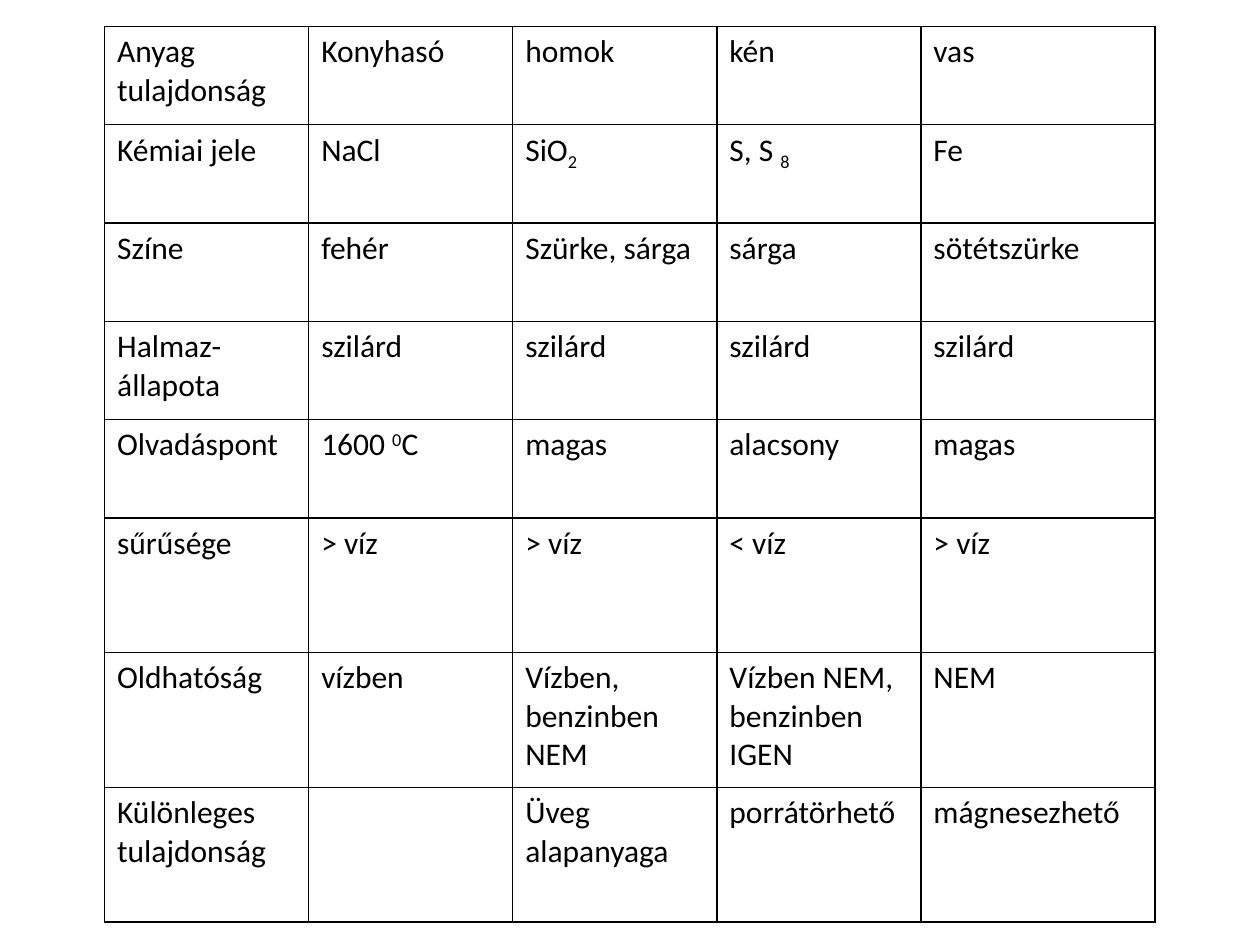
import pptx
import pptx.dml.color
import pptx.oxml
import pptx.util
from lxml import etree

SLIDE = (10, 7.5)
ORIGIN = (0.83, 0.21)
COLUMNS = [1.62] * 4 + [1.86]
ROW_HEIGHTS = [0.78] * 5 + [1.07] * 3
BLACK = "000000"
SUB, SUPER = -25000, 30000

PROPERTIES = [
    ["Anyag\ntulajdonság", "Konyhasó", "homok", "kén", "vas"],
    ["Kémiai jele", "NaCl", [("SiO", 0), ("2", SUB)], [("S, S ", 0), ("8", SUB)], "Fe"],
    ["Színe", "fehér", "Szürke, sárga", "sárga", "sötétszürke"],
    ["Halmaz-állapota"] + ["szilárd"] * 4,
    ["Olvadáspont", [("1600 ", 0), ("0", SUPER), ("C", 0)], "magas", "alacsony", "magas"],
    ["sűrűsége", "> víz", "> víz", "< víz", "> víz"],
    ["Oldhatóság", "vízben", "Vízben, benzinben NEM", "Vízben NEM, benzinben IGEN", "NEM"],
    ["Különleges tulajdonság", "", "Üveg alapanyaga", "porrátörhető", "mágnesezhető"],
]


def rgb(color):
    """Turn a hex string into a colour."""
    return pptx.dml.color.RGBColor.from_string(color)


def write(tf, text, size=18, font="Calibri", color=BLACK):
    """Write a string, or a list of (text, baseline) runs, into a text frame."""
    paragraphs = [[(line, 0)] for line in text.split("\n")] if isinstance(text, str) else [text]
    for i, runs in enumerate(paragraphs):
        p = tf.add_paragraph() if i else tf.paragraphs[0]
        for content, baseline in runs:
            r = p.add_run()
            r.text = content
            r.font.size = pptx.util.Pt(size)
            r.font.name = font
            r.font.color.rgb = rgb(color)
            if baseline:
                r._r.get_or_add_rPr().set("baseline", str(baseline))


def add_borders(cell, color=BLACK, width=1):
    """Draw a solid line on each side of a cell."""
    tcPr = cell._tc.get_or_add_tcPr()
    for i, side in enumerate(("lnL", "lnR", "lnT", "lnB")):
        ln = etree.Element(pptx.oxml.ns.qn(f"a:{side}"), w=str(pptx.util.Pt(width)))
        fill = etree.SubElement(ln, pptx.oxml.ns.qn("a:solidFill"))
        etree.SubElement(fill, pptx.oxml.ns.qn("a:srgbClr"), val=color)
        tcPr.insert(i, ln)


def main():
    """Build the slide with the table of substance properties."""
    prs = pptx.Presentation()
    prs.slide_width, prs.slide_height = map(pptx.util.Inches, SLIDE)
    s = prs.slides.add_slide(prs.slide_layouts[6])
    box = map(pptx.util.Inches, (*ORIGIN, sum(COLUMNS), sum(ROW_HEIGHTS)))
    table = s.shapes.add_table(len(ROW_HEIGHTS), len(COLUMNS), *box).table
    table.first_row = table.horz_banding = False
    for column, width in zip(table.columns, COLUMNS):
        column.width = pptx.util.Inches(width)
    for row, height, texts in zip(table.rows, ROW_HEIGHTS, PROPERTIES):
        row.height = pptx.util.Inches(height)
        for cell, text in zip(row.cells, texts):
            cell.fill.background()
            add_borders(cell)
            write(cell.text_frame, text)
    prs.save("out.pptx")


if __name__ == "__main__":
    main()
